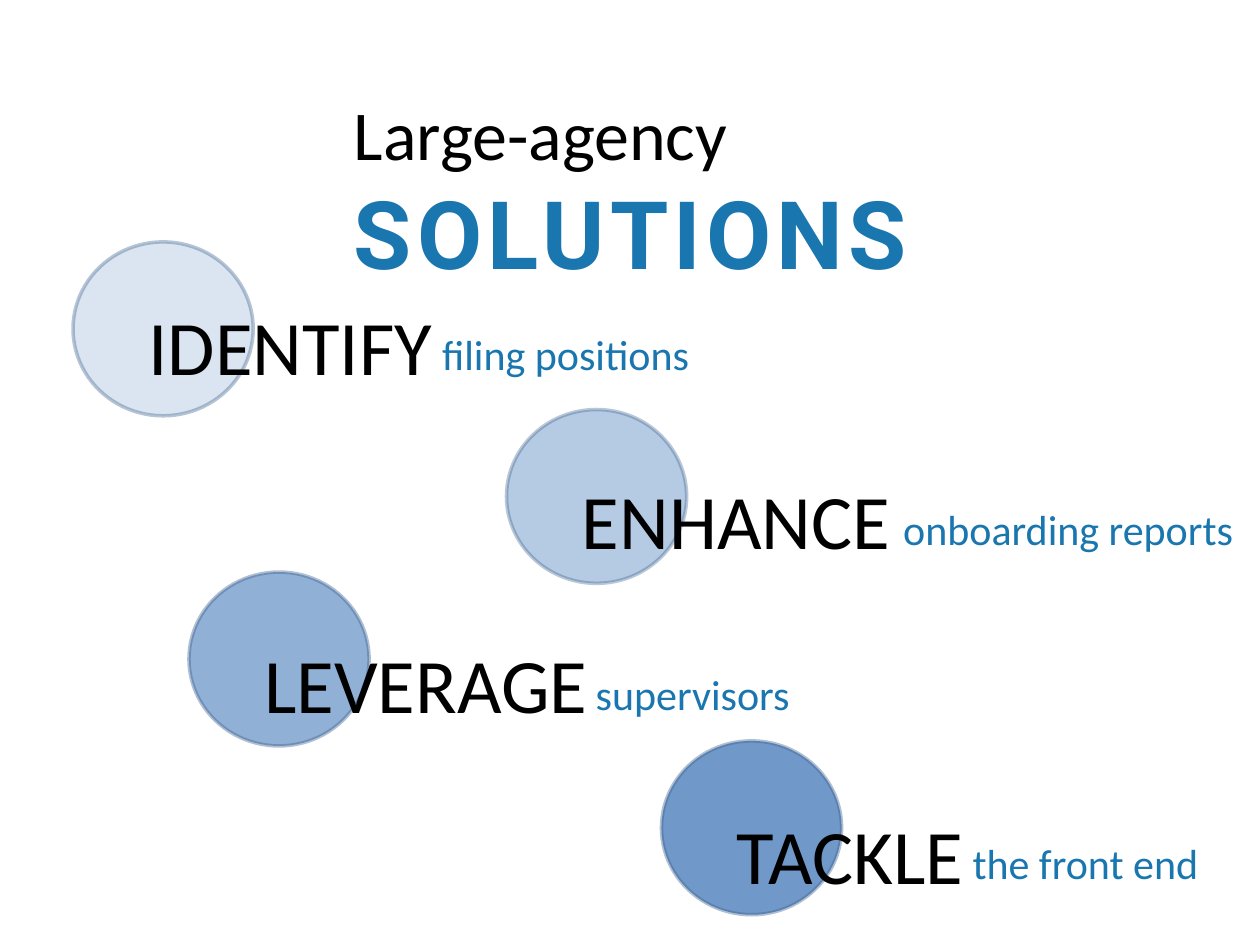
"""Build the large-agency solutions slide with four circle-marked actions."""
from dataclasses import dataclass

from lxml import etree
from pptx import Presentation, util as u
from pptx.dml import color
from pptx.enum import shapes, text
from pptx.oxml import ns

COLOURS = {"circle": "4F81BD", "edge": "3A5F8C", "word": "000000", "accent": "1976AF"}
FORMATS = {
    "word": {"size": u.Pt(44), "name": "Calibri"},
    "detail": {"size": u.Pt(24), "name": "Calibri"},
    "lead": {"size": u.Pt(40), "name": "Calibri"},
    "title": {"size": u.Pt(54), "name": "Roboto", "bold": True},
}
WIDTH, HEIGHT = u.Inches(10), u.Inches(7.5)
COLUMNS, ROWS = 100, 75
CIRCLE_SIZE = (14.3, 13.8)
WORD_INDENT = 5


@dataclass(frozen=True)
class Area:
    column: float
    row: float
    columns: float
    rows: float

    def lengths(self) -> tuple[int, ...]:
        across, down = WIDTH / COLUMNS, HEIGHT / ROWS
        return (round(self.column * across), round(self.row * down),
                round(self.columns * across), round(self.rows * down))


@dataclass(frozen=True)
class Action:
    word: str
    detail: str
    column: float
    row: float
    word_row: float
    word_columns: float
    detail_column: float
    detail_row: float
    detail_columns: float
    fill_opacity: int
    edge_opacity: int


ACTIONS = (
    Action("IDENTIFY", "filing positions", 5.8, 19.2, 23.2, 35.5, 34.1, 25.6, 22.5, 20, 37),
    Action("ENHANCE", "onboarding reports", 40.2, 32.5, 37, 28.3, 70.7, 39.5, 29.3, 42, 34),
    Action("LEVERAGE", "supervisors", 15, 45.4, 50, 28.3, 46.3, 52.6, 18.7, 62, 40),
    Action("TACKLE", "the front end", 52.5, 58.8, 63.6, 28.3, 76.2, 66, 23.8, 81, 40),
)


def paint(fill, colour: str, opacity: int) -> None:
    """Give a fill a solid colour with an opacity in percent."""
    fill.solid()
    fill.fore_color.rgb = color.RGBColor.from_string(COLOURS[colour])
    element = fill._xPr.find(ns.qn("a:solidFill"))[0]
    etree.SubElement(element, ns.qn("a:alpha")).set("val", str(opacity * 1000))


def add_circle(parent, action: Action) -> None:
    """Draw the translucent circle of an action."""
    area = Area(action.column, action.row, *CIRCLE_SIZE)
    circle = parent.add_shape(shapes.MSO_SHAPE.OVAL, *area.lengths())
    circle.shadow.inherit = False
    paint(circle.fill, "circle", action.fill_opacity)
    circle.line.width = u.Pt(2)
    paint(circle.line.fill, "edge", action.edge_opacity)


def add_box(parent, area: Area):
    """Add a wrapping text box and return its first paragraph."""
    box = parent.add_textbox(*area.lengths())
    box.text_frame.word_wrap = True
    box.text_frame.auto_size = text.MSO_AUTO_SIZE.SHAPE_TO_FIT_TEXT
    return box.text_frame.paragraphs[0]


def add_span(para, wording: str, style: str, colour: str):
    """Append a formatted run to a paragraph."""
    span = para.add_run()
    span.text = wording
    for name, value in FORMATS[style].items():
        setattr(span.font, name, value)
    span.font.color.rgb = color.RGBColor.from_string(COLOURS[colour])
    return span


def add_action(page, action: Action) -> None:
    """Draw a circle with its word and detail as one group."""
    parent = page.shapes.add_group_shape().shapes
    add_circle(parent, action)
    word = Area(action.column + WORD_INDENT, action.word_row, action.word_columns, 8.4)
    add_span(add_box(parent, word), action.word, "word", "word")
    detail = Area(action.detail_column, action.detail_row, action.detail_columns, 5)
    add_span(add_box(parent, detail), action.detail, "detail", "accent")


def add_title(page) -> None:
    """Write the two-part title."""
    para = add_box(page.shapes, Area(27.1, 6.7, 69.2, 10.1))
    add_span(para, "Large-agency ", "lead", "word")
    span = add_span(para, "SOLUTIONS", "title", "accent")
    span.font._element.set("spc", "300")


def main() -> None:
    """Build and save the deck."""
    deck = Presentation()
    deck.slide_width, deck.slide_height = WIDTH, HEIGHT
    page = deck.slides.add_slide(deck.slide_layouts[6])
    for action in ACTIONS:
        add_action(page, action)
    add_title(page)
    deck.save("out.pptx")


if __name__ == "__main__":
    main()
